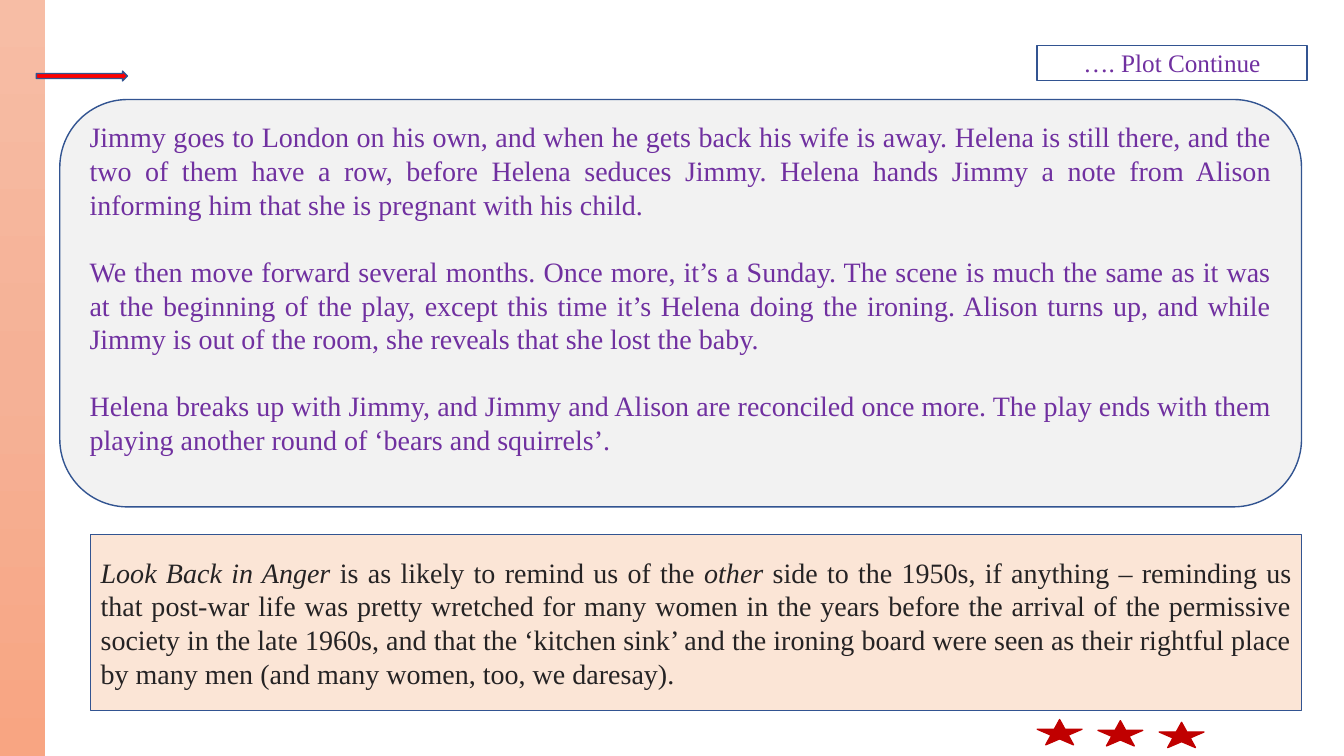
"""Build the closing plot slide for Look Back in Anger."""
from copy import deepcopy

from pptx import Presentation
from pptx import util as u
from pptx.dml import color
from pptx.enum import shapes, text
from pptx.oxml import ns

FONT = "Times New Roman"
PURPLE, INK, BLUE, RED = "7030A0", "252324", "325491", "C00000"


def paint(shape, fill, line):
    shape.fill.solid()
    shape.fill.fore_color.rgb = color.RGBColor.from_string(fill)
    shape.line.color.rgb = color.RGBColor.from_string(line)
    shape.line.width = u.Pt(1)


def format_text(shape, size, hex_color, alignment):
    frame = shape.text_frame
    frame.word_wrap = True
    frame.auto_size = text.MSO_AUTO_SIZE.NONE
    frame.vertical_anchor = text.MSO_ANCHOR.MIDDLE
    for paragraph in frame.paragraphs:
        paragraph.alignment = alignment
        for run in paragraph.runs:
            run.font.name = FONT
            run.font.size = u.Pt(size)
            run.font.color.rgb = color.RGBColor.from_string(hex_color)


presentation = Presentation()
presentation.slide_width, presentation.slide_height = u.Pt(960), u.Pt(540)
slide = presentation.slides.add_slide(presentation.slide_layouts[5])

title = slide.shapes.title
title.left, title.top, title.width, title.height = u.Pt(740.6), u.Pt(32.4), u.Pt(193), u.Pt(25.2)
title.text_frame.text = "…. Plot Continue"
title.text_frame.margin_bottom = u.Pt(5)
paint(title, "FFFFFF", BLUE)
format_text(title, 18, PURPLE, text.PP_ALIGN.CENTER)

preset = shapes.MSO_SHAPE
parts = {}
for name, kind, left, top, width, height, fill, line in [
    ("plot", preset.ROUNDED_RECTANGLE, 42.7, 71.1, 887, 291, "F2F2F2", BLUE),
    ("band", preset.RECTANGLE, 0, 0, 32, 540, "F7BDA5", None),
    ("arrow", preset.RIGHT_ARROW, 26, 50.8, 65, 7, "FF0000", BLUE),
    ("verdict", preset.RECTANGLE, 64.8, 381.6, 865, 126, "FBE5D6", BLUE),
    ("left star", preset.STAR_5_POINT, 740.9, 514, 32, 18, RED, RED),
    ("middle star", preset.STAR_5_POINT, 784.3, 514.8, 32, 18, RED, RED),
    ("right star", preset.STAR_5_POINT, 828, 516, 32, 18, RED, RED),
]:
    shape = slide.shapes.add_shape(kind, u.Pt(left), u.Pt(top), u.Pt(width), u.Pt(height))
    shape.shadow.inherit = False
    paint(shape, fill, line or fill)
    parts[name] = shape

band = parts["band"]
band.line.fill.background()
band.fill.gradient()
band.fill.gradient_angle = 270
stop_list = band._element.spPr.find(".//" + ns.qn("a:gsLst"))
stop_list.insert(1, deepcopy(stop_list[0]))
for stop, position, shade in zip(band.fill.gradient_stops, (0, 0.5, 1), ("F7BDA5", "F5B196", "F8A582")):
    stop.position = position
    stop.color.rgb = color.RGBColor.from_string(shade)

plot = parts["plot"]
plot.text_frame.text = "\n".join([
    "Jimmy goes to London on his own, and when he gets back his wife is away. Helena is still there, "
    "and the two of them have a row, before Helena seduces Jimmy. Helena hands Jimmy a note from Alison "
    "informing him that she is pregnant with his child.",
    "We then move forward several months. Once more, it’s a Sunday. The scene is much the same as it was "
    "at the beginning of the play, except this time it’s Helena doing the ironing. Alison turns up, and "
    "while Jimmy is out of the room, she reveals that she lost the baby.",
    "Helena breaks up with Jimmy, and Jimmy and Alison are reconciled once more. The play ends with them "
    "playing another round of ‘bears and squirrels’.",
])
plot.text_frame.margin_bottom = u.Pt(25.2)
for paragraph in plot.text_frame.paragraphs[1:]:
    paragraph.space_before = u.Pt(24)
format_text(plot, 20, PURPLE, text.PP_ALIGN.JUSTIFY)

verdict = parts["verdict"]
for words, italic in [
    ("Look Back in Anger ", True),
    ("is as likely to remind us of the ", False),
    ("other ", True),
    ("side to the 1950s, if anything – reminding us that post-war life was pretty wretched for many women "
     "in the years before the arrival of the permissive society in the late 1960s, and that the ‘kitchen "
     "sink’ and the ironing board were seen as their rightful place by many men (and many women, too, we "
     "daresay).", False),
]:
    run = verdict.text_frame.paragraphs[0].add_run()
    run.text = words
    run.font.italic = italic
format_text(verdict, 20, INK, text.PP_ALIGN.JUSTIFY)

presentation.save("out.pptx")
